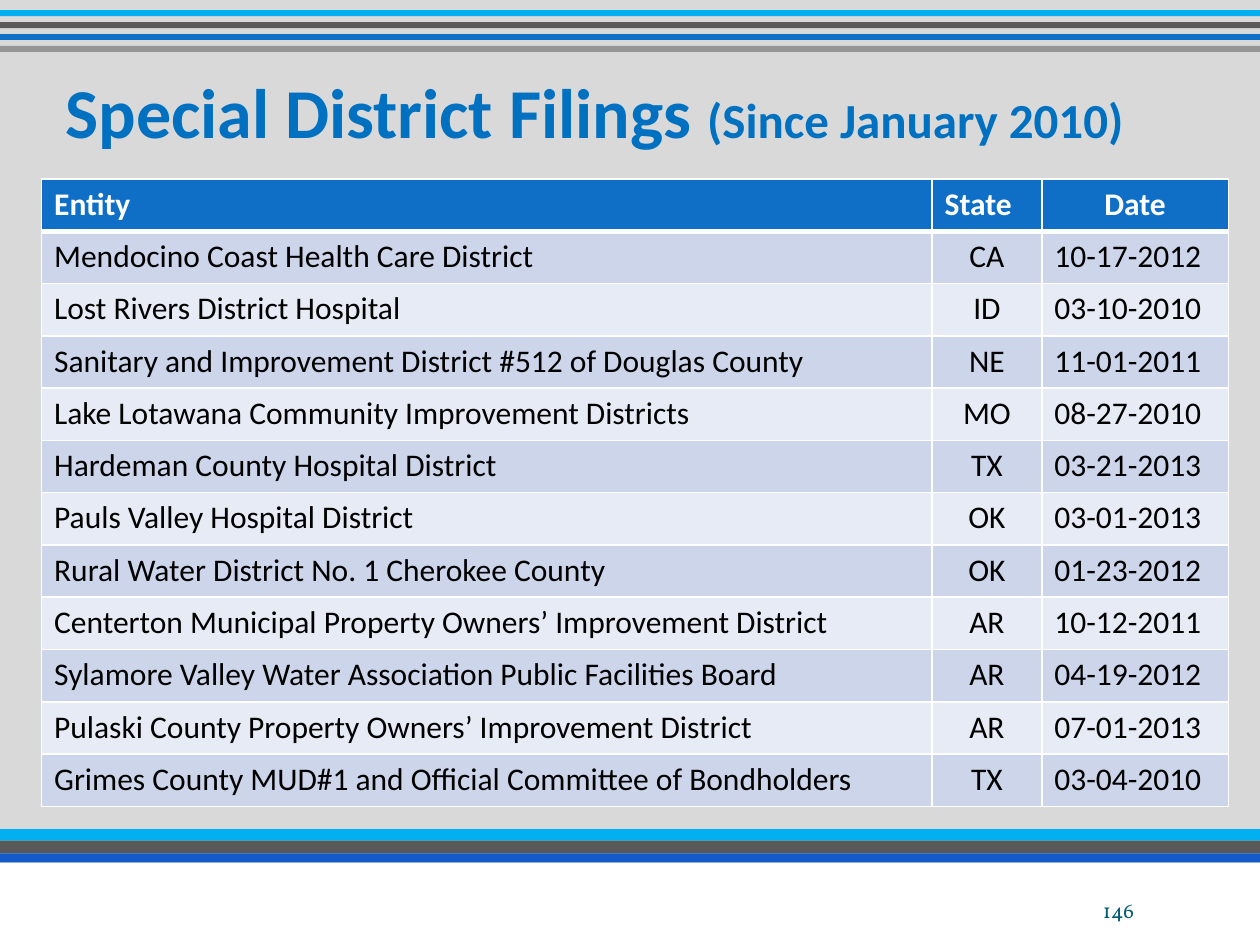
from lxml.etree import SubElement
from pptx import Presentation
from pptx.dml.color import RGBColor
from pptx.enum.shapes import MSO_SHAPE
from pptx.enum.text import MSO_ANCHOR, PP_ALIGN
from pptx.oxml.ns import qn
from pptx.util import Inches, Pt

WHITE = RGBColor(0xFF, 0xFF, 0xFF)
BLACK = RGBColor(0, 0, 0)
GROUND = RGBColor(0xD9, 0xD9, 0xD9)
SKY = RGBColor(0x00, 0xB0, 0xF0)
SLATE = RGBColor(0x59, 0x59, 0x59)
BLUE = RGBColor(0x0F, 0x6F, 0xC6)
GRAY = RGBColor(0x96, 0x96, 0x96)
ROYAL = RGBColor(0x14, 0x5A, 0xC8)
TITLE = RGBColor(0x00, 0x70, 0xC0)
TEAL = RGBColor(0x04, 0x5D, 0x75)
BANDS = (RGBColor(0xCC, 0xD5, 0xEA), RGBColor(0xE7, 0xEB, 0xF5))

WIDE, HIGH = Inches(10), Inches(7.5)
COLS = (7.06, 0.87, 1.48)
HEAD = ("Entity", "State", "Date")
ROWS = (
    ("Mendocino Coast Health Care District", "CA", "10-17-2012"),
    ("Lost Rivers District Hospital", "ID", "03-10-2010"),
    ("Sanitary and Improvement District #512 of Douglas County", "NE", "11-01-2011"),
    ("Lake Lotawana Community Improvement Districts", "MO", "08-27-2010"),
    ("Hardeman County Hospital District", "TX", "03-21-2013"),
    ("Pauls Valley Hospital District", "OK", "03-01-2013"),
    ("Rural Water District No. 1 Cherokee County", "OK", "01-23-2012"),
    ("Centerton Municipal Property Owners’ Improvement District", "AR", "10-12-2011"),
    ("Sylamore Valley Water Association Public Facilities Board", "AR", "04-19-2012"),
    ("Pulaski County Property Owners’ Improvement District", "AR", "07-01-2013"),
    ("Grimes County MUD#1 and Official Committee of Bondholders", "TX", "03-04-2010"),
)


def box(left, top, width, height):
    return tuple(Inches(n) for n in (left, top, width, height))


def add_run(para, text, size, color, bold=False, face="Calibri"):
    run = para.add_run()
    run.text = text
    font = run.font
    font.name, font.size, font.bold = face, Pt(size), bold
    font.color.rgb = color


def add_bar(slide, area, color):
    bar = slide.shapes.add_shape(MSO_SHAPE.RECTANGLE, *area)
    bar.shadow.inherit = False
    bar.fill.solid()
    bar.fill.fore_color.rgb = color
    bar.line.fill.background()


def add_top(slide, area):
    """Spread four thin stripes evenly down the area, each half a step high."""
    left, top, width, height = area
    tints = (SKY, SLATE, BLUE, GRAY)
    step = height // len(tints)
    for i, color in enumerate(tints):
        add_bar(slide, (left, top + i * step, width, step // 2), color)


def add_foot(slide, area):
    """Stack three stripes over a white strip, by shares of the area."""
    left, top, width, height = area
    marks = (0, 0.1, 0.21, 0.29, 1)
    for start, end, color in zip(marks, marks[1:], (SKY, SLATE, ROYAL, WHITE)):
        add_bar(slide, (left, top + int(start * height), width,
                        int((end - start) * height)), color)


def add_title(slide, area):
    title = slide.shapes.title
    title.left, title.top, title.width, title.height = area
    frame = title.text_frame
    frame.vertical_anchor = MSO_ANCHOR.MIDDLE
    para = frame.paragraphs[0]
    para.alignment = PP_ALIGN.LEFT
    add_run(para, "Special District Filings ", 40, TITLE, True)
    add_run(para, "(Since January 2010)", 28, TITLE, True)


def add_edges(cell, top, low):
    """Draw white cell borders; top and low are widths in points."""
    props = cell._tc.get_or_add_tcPr()
    for side, width in (("L", 1), ("R", 1), ("T", top), ("B", low)):
        line = SubElement(props, qn("a:ln" + side), w=str(Pt(width)))
        fill = SubElement(line, qn("a:solidFill"))
        SubElement(fill, qn("a:srgbClr"), val=str(WHITE))


def add_grid(slide, area):
    lines = (HEAD,) + ROWS
    table = slide.shapes.add_table(len(lines), len(COLS), *area).table
    for col, share in zip(table.columns, COLS):
        col.width = int(area[2] * share / sum(COLS))
    for row in table.rows:
        row.height = area[3] // len(lines)
    for r, line in enumerate(lines):
        first = r == 0
        for c, text in enumerate(line):
            cell = table.cell(r, c)
            add_edges(cell, 3 if r == 1 else 1, 3 if first else 1)
            cell.fill.solid()
            cell.fill.fore_color.rgb = BLUE if first else BANDS[(r - 1) % 2]
            para = cell.text_frame.paragraphs[0]
            mid = c == (2 if first else 1)
            para.alignment = PP_ALIGN.CENTER if mid else PP_ALIGN.LEFT
            add_run(para, text, 18, WHITE if first else BLACK, first)


def add_page(slide, area):
    frame = slide.shapes.add_textbox(*area).text_frame
    frame.word_wrap = True
    frame.vertical_anchor = MSO_ANCHOR.BOTTOM
    frame.margin_left = frame.margin_right = 0
    frame.margin_top = frame.margin_bottom = 0
    para = frame.paragraphs[0]
    para.alignment = PP_ALIGN.RIGHT
    add_run(para, "146", 12, TEAL, face="Vollkorn")


def main():
    deck = Presentation()
    deck.slide_width, deck.slide_height = WIDE, HIGH
    slide = deck.slides.add_slide(deck.slide_layouts[5])
    back = slide.background.fill
    back.solid()
    back.fore_color.rgb = GROUND
    add_top(slide, box(0, 0.08, 10, 0.38))
    add_foot(slide, box(0, 6.58, 10, 0.92))
    add_title(slide, box(0.42, 0.42, 9, 0.92))
    add_grid(slide, box(0.33, 1.42, 9.42, 4.98))
    add_page(slide, box(6.67, 6.92, 2.33, 0.4))
    deck.save("out.pptx")


if __name__ == "__main__":
    main()
